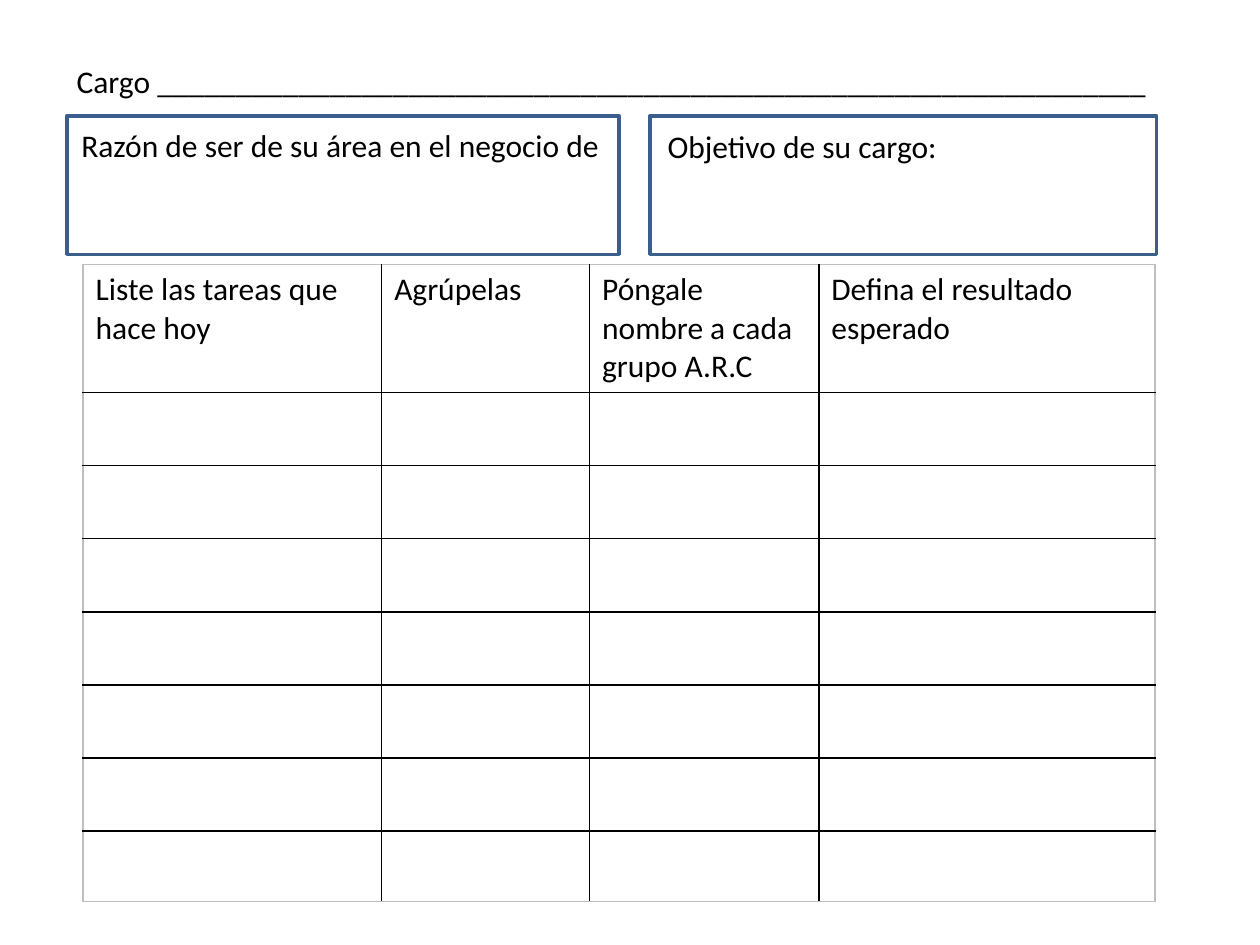
from typing import NamedTuple

from lxml.etree import SubElement
from pptx import Presentation
from pptx.dml.color import RGBColor
from pptx.enum.shapes import MSO_SHAPE
from pptx.enum.text import MSO_AUTO_SIZE
from pptx.oxml.ns import qn
from pptx.util import Pt

COLORS = {"text": "000000", "paper": "FFFFFF", "frame": "3A5F8C",
          "grid": "000000", "edge": "BFBFBF"}
FONT = "Calibri"


class Box(NamedTuple):
    x: float
    y: float
    w: float
    h: float


class Label(NamedTuple):
    text: str
    box: Box


FRAMES = [Box(38.2, 66.2, 315.4, 79.2), Box(371.5, 66.2, 289.4, 79.2)]
LABELS = [
    Label("Cargo " + "_" * 63, Box(36.7, 31.7, 633.6, 51.1)),
    Label("Objetivo de su cargo:", Box(374.4, 69, 170.6, 28.8)),
    Label("Razón de ser de su área en el negocio de", Box(39.4, 68.6, 314.6, 28.8)),
]
HEADERS = ["Liste las tareas que hace hoy", "Agrúpelas",
           "Póngale nombre a cada grupo A.R.C", "Defina el resultado esperado"]
TABLE = Box(47.5, 151.2, 612, 362.9)
COL_WIDTHS = [170.6, 118.8, 131, 192.2]
ROW_HEIGHTS = [72] + [41.76] * 6 + [40.3]


def rgb(name: str) -> RGBColor:
    return RGBColor.from_string(COLORS[name])


def write(tf, text: str, *, size: float = 18, color: str = "text", font: str = FONT) -> None:
    p = tf.paragraphs[0]
    f = p.font
    if text:
        r = p.add_run()
        r.text = text
        f = r.font
    f.size = Pt(size)
    f.name = font
    f.color.rgb = rgb(color)


def add_frame(s, box: Box) -> None:
    sp = s.shapes.add_shape(MSO_SHAPE.RECTANGLE, *map(Pt, box))
    sp.shadow.inherit = False
    sp.fill.solid()
    sp.fill.fore_color.rgb = rgb("paper")
    sp.line.color.rgb = rgb("frame")
    sp.line.width = Pt(2)


def add_label(s, label: Label) -> None:
    tf = s.shapes.add_textbox(*map(Pt, label.box)).text_frame
    tf.word_wrap = False
    tf.auto_size = MSO_AUTO_SIZE.SHAPE_TO_FIT_TEXT
    write(tf, label.text)


def set_borders(cell, outer: dict[str, bool]) -> None:
    tc_pr = cell._tc.get_or_add_tcPr()
    for side, is_outer in outer.items():
        ln = SubElement(tc_pr, qn(f"a:ln{side}"), w=str(Pt(1)))
        fill = SubElement(ln, qn("a:solidFill"))
        SubElement(fill, qn("a:srgbClr"), val=COLORS["edge" if is_outer else "grid"])


def add_task_table(s) -> None:
    rows, cols = len(ROW_HEIGHTS), len(COL_WIDTHS)
    table = s.shapes.add_table(rows, cols, *map(Pt, TABLE)).table
    table.first_row = table.horz_banding = False
    for col, width in zip(table.columns, COL_WIDTHS):
        col.width = Pt(width)
    for i, (row, height) in enumerate(zip(table.rows, ROW_HEIGHTS)):
        row.height = Pt(height)
        for j, cell in enumerate(row.cells):
            set_borders(cell, {"L": j == 0, "R": j == cols - 1,
                               "T": i == 0, "B": i == rows - 1})
            cell.fill.background()
            write(cell.text_frame, HEADERS[j] if i == 0 else "")


def main() -> None:
    prs = Presentation()
    prs.slide_width, prs.slide_height = Pt(720), Pt(540)
    s = prs.slides.add_slide(prs.slide_layouts[6])
    add_task_table(s)
    for box in FRAMES:
        add_frame(s, box)
    for label in LABELS:
        add_label(s, label)
    prs.save("out.pptx")


if __name__ == "__main__":
    main()
